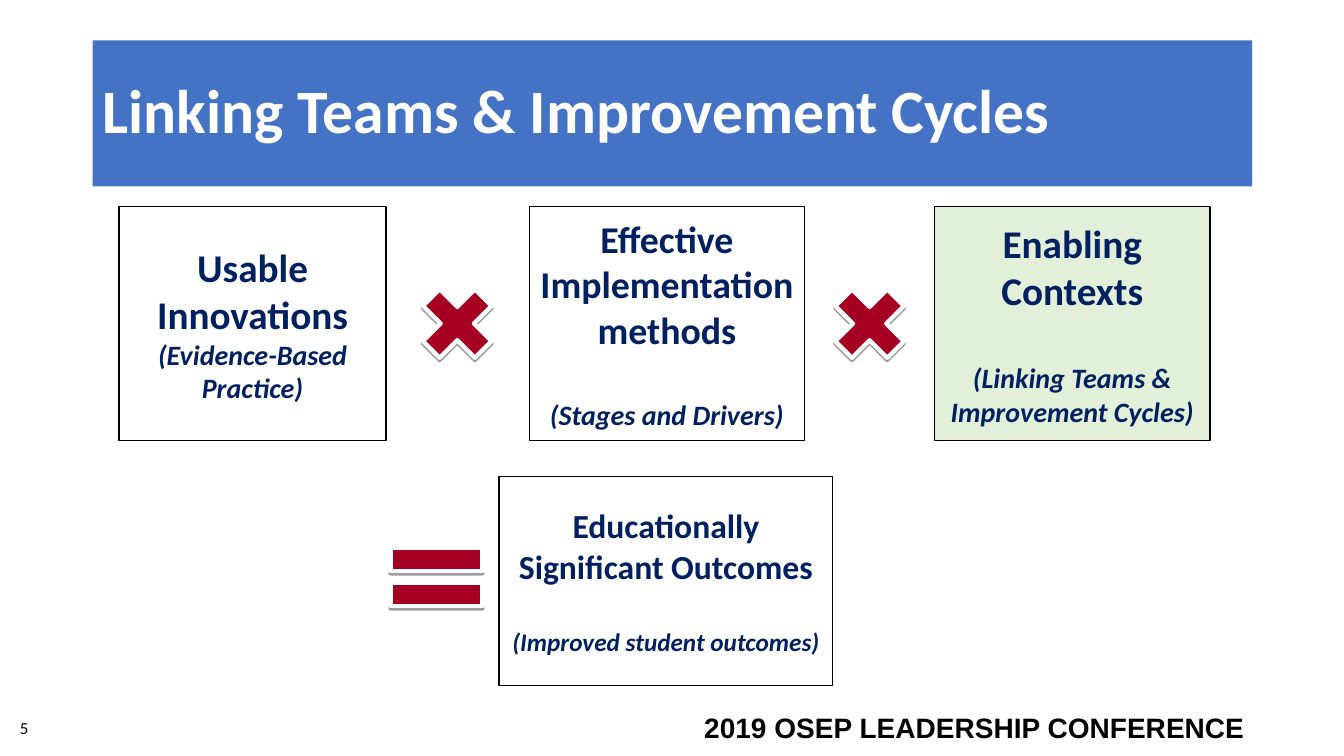
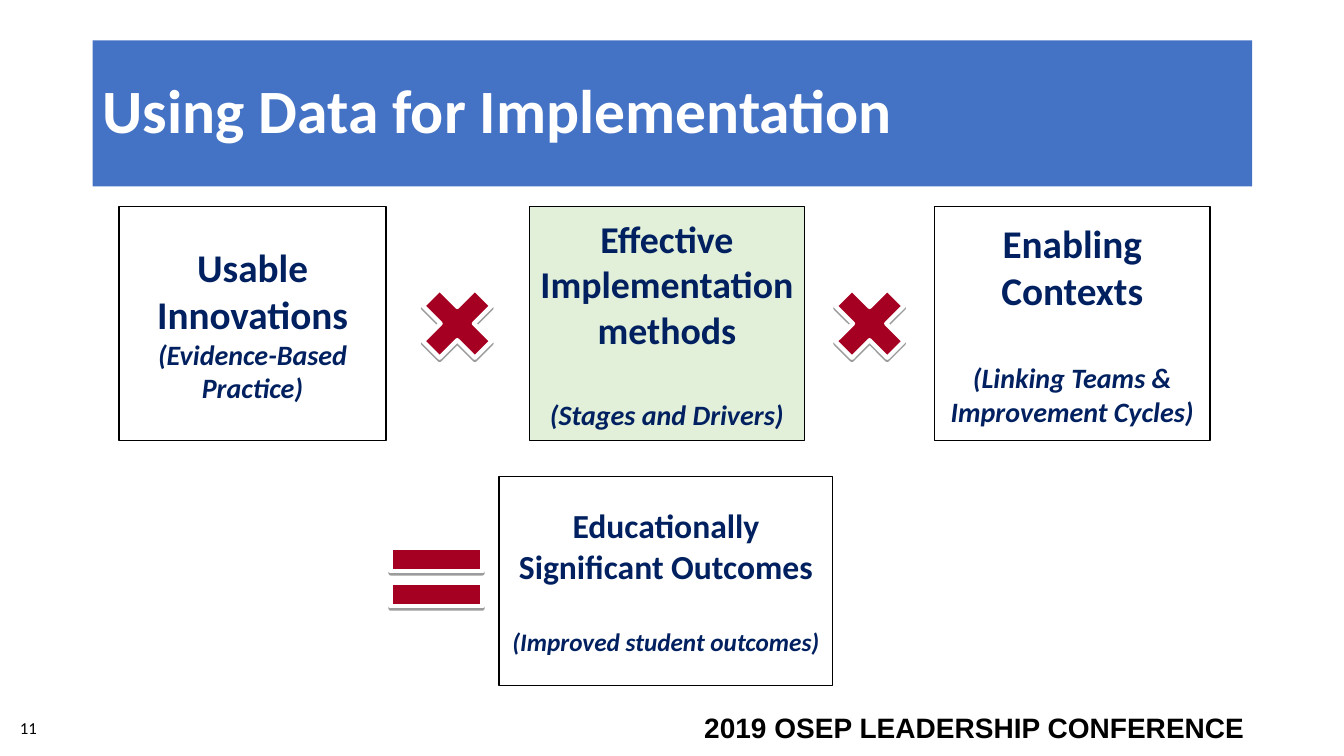
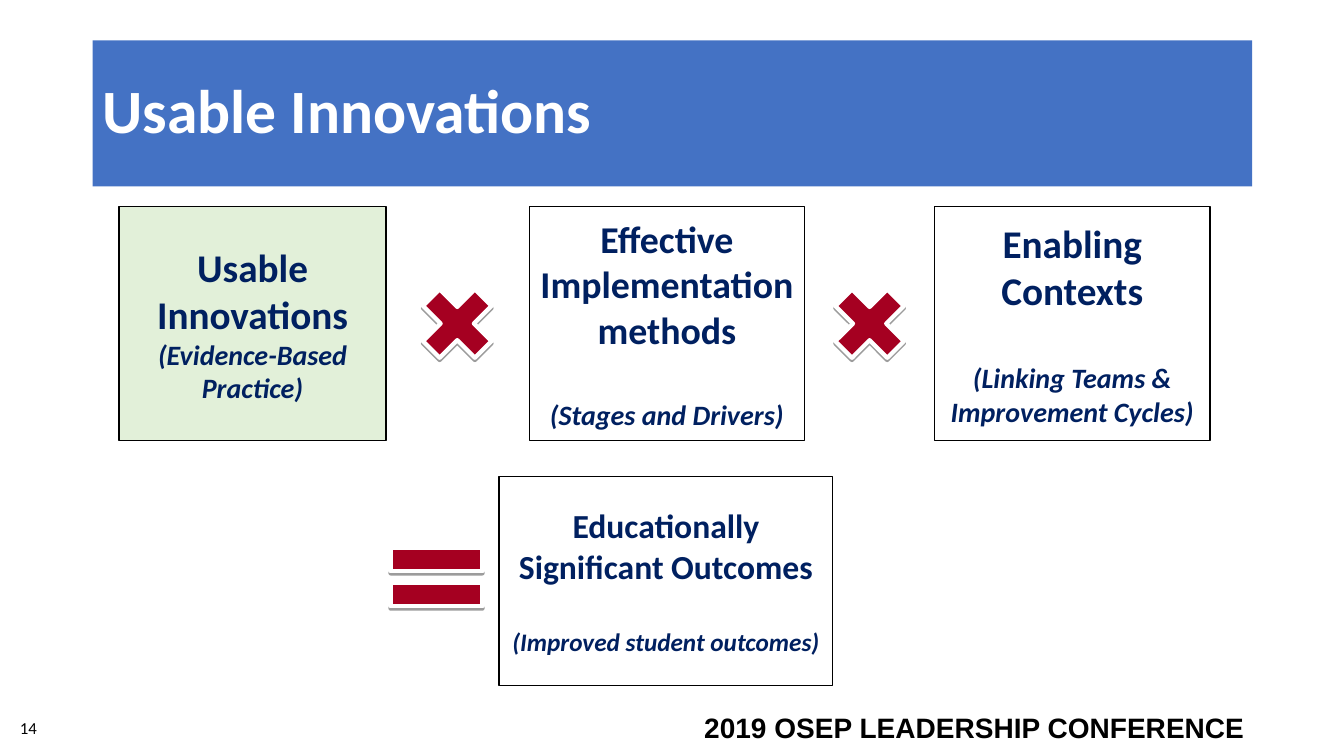
"""Build three slides on the implementation formula, each highlighting one factor."""
import pptx
import pptx.dml.color
import pptx.enum.shapes
import pptx.enum.text
import pptx.oxml
import pptx.oxml.ns
import pptx.util

Inches = pptx.util.Inches
Pt = pptx.util.Pt
MSO_SHAPE = pptx.enum.shapes.MSO_SHAPE
ALIGN = pptx.enum.text.PP_ALIGN
ANCHOR = pptx.enum.text.MSO_ANCHOR

COLORS = {
    "band": "4472C4",
    "navy": "002060",
    "crimson": "A50021",
    "highlight": "E2F0D9",
    "white": "FFFFFF",
    "black": "000000",
}
SHADOW = (
    '<a:outerShdw %s blurRad="0" dist="20000" dir="5400000" rotWithShape="0">'
    '<a:srgbClr val="000000"><a:alpha val="38000"/></a:srgbClr></a:outerShdw>'
    % pptx.oxml.ns.nsdecls("a")
)
ROW_TOP, ROW_HEIGHT = 2.05, 2.32
SIGN_SIZE = 0.99
LINE_HEIGHT = 1.22

FACTORS = [
    ("Usable Innovations", "(Evidence-Based Practice)", 1.18, 2.65, 28, 0),
    ("Effective Implementation methods", "(Stages and Drivers)", 5.25, 2.73, 27, 1),
    ("Enabling Contexts", "(Linking Teams & Improvement Cycles)", 9.27, 2.73, 28, 1),
]
SLIDES = [
    ("Linking Teams & Improvement Cycles", 5, "Enabling Contexts"),
    ("Using Data for Implementation", 11, "Effective Implementation methods"),
    ("Usable Innovations", 14, "Usable Innovations"),
]


class Deck:
    def __init__(self):
        self.prs = pptx.Presentation()
        self.prs.slide_width = Inches(13.33)
        self.prs.slide_height = Inches(7.5)
        self.s = None

    def color(self, name):
        return pptx.dml.color.RGBColor.from_string(COLORS[name])

    def new_slide(self, title, number):
        self.s = self.prs.slides.add_slide(self.prs.slide_layouts[6])
        self.text(6.67, 7, 5.77, 0.44, "2019 OSEP LEADERSHIP CONFERENCE", 20,
                  font="Arial", bold=True, align=ALIGN.RIGHT, anchor=ANCHOR.TOP)
        self.title(title)
        self.text(0.1, 7.02, 3, 0.4, str(number), 12)

    def format(self, p, size, color="black", font="Calibri", bold=False,
               italic=False, align=ALIGN.LEFT):
        p.alignment = align
        for r in p.runs:
            r.font.name = font
            r.font.size = Pt(size)
            r.font.bold = bold
            r.font.italic = italic
            r.font.color.rgb = self.color(color)

    def text(self, x, y, w, h, text, size, anchor=ANCHOR.MIDDLE, **style):
        sp = self.s.shapes.add_textbox(Inches(x), Inches(y), Inches(w), Inches(h))
        tf = sp.text_frame
        tf.word_wrap = True
        tf.vertical_anchor = anchor
        tf.text = text
        self.format(tf.paragraphs[0], size, **style)

    def shape(self, kind, x, y, w, h, fill, line=None, line_width=1):
        sp = self.s.shapes.add_shape(kind, Inches(x), Inches(y), Inches(w), Inches(h))
        sp.fill.solid()
        sp.fill.fore_color.rgb = self.color(fill)
        if line:
            sp.line.color.rgb = self.color(line)
            sp.line.width = Pt(line_width)
        else:
            sp.line.fill.background()
        sp.shadow.inherit = False
        sp.text_frame.word_wrap = True
        sp.text_frame.vertical_anchor = ANCHOR.MIDDLE
        return sp

    def title(self, text):
        sp = self.shape(MSO_SHAPE.RECTANGLE, 0.92, 0.4, 11.5, 1.45, "band")
        sp.text_frame.text = text
        p = sp.text_frame.paragraphs[0]
        p.line_spacing = 0.9
        self.format(p, 44, color="white", bold=True)

    def card(self, x, y, w, h, heading, caption, size, caption_size, gap_lines,
             fill="white"):
        sp = self.shape(MSO_SHAPE.RECTANGLE, x, y, w, h, fill, "black")
        tf = sp.text_frame
        tf.text = heading
        self.format(tf.paragraphs[0], size, color="navy", bold=True, align=ALIGN.CENTER)
        p = tf.add_paragraph()
        p.text = caption
        p.space_before = Pt(round(gap_lines * size * LINE_HEIGHT))
        self.format(p, caption_size, color="navy", bold=True, italic=True,
                    align=ALIGN.CENTER)

    def sign(self, kind, x, y, w):
        sp = self.shape(kind, x, y, w, SIGN_SIZE, "crimson", "white", 3)
        effects = sp._element.spPr.find(pptx.oxml.ns.qn("a:effectLst"))
        effects.append(pptx.oxml.parse_xml(SHADOW))


def main():
    deck = Deck()
    sign_top = ROW_TOP + (ROW_HEIGHT - SIGN_SIZE) / 2
    for title, number, active in SLIDES:
        deck.new_slide(title, number)
        deck.sign(MSO_SHAPE.MATH_EQUAL, 3.71, 5.23, 1.24)
        deck.card(4.95, 4.73, 3.31, 2.07, "Educationally Significant Outcomes",
                  "(Improved student outcomes)", 24, 18, 1)
        for heading, caption, x, w, size, gap_lines in FACTORS:
            fill = "highlight" if heading == active else "white"
            deck.card(x, ROW_TOP, w, ROW_HEIGHT, heading, caption, size, 20,
                      gap_lines, fill)
        for x in (4.04, 8.13):
            deck.sign(MSO_SHAPE.MATH_MULTIPLY, x, sign_top, SIGN_SIZE)
    deck.prs.save("out.pptx")


if __name__ == "__main__":
    main()
